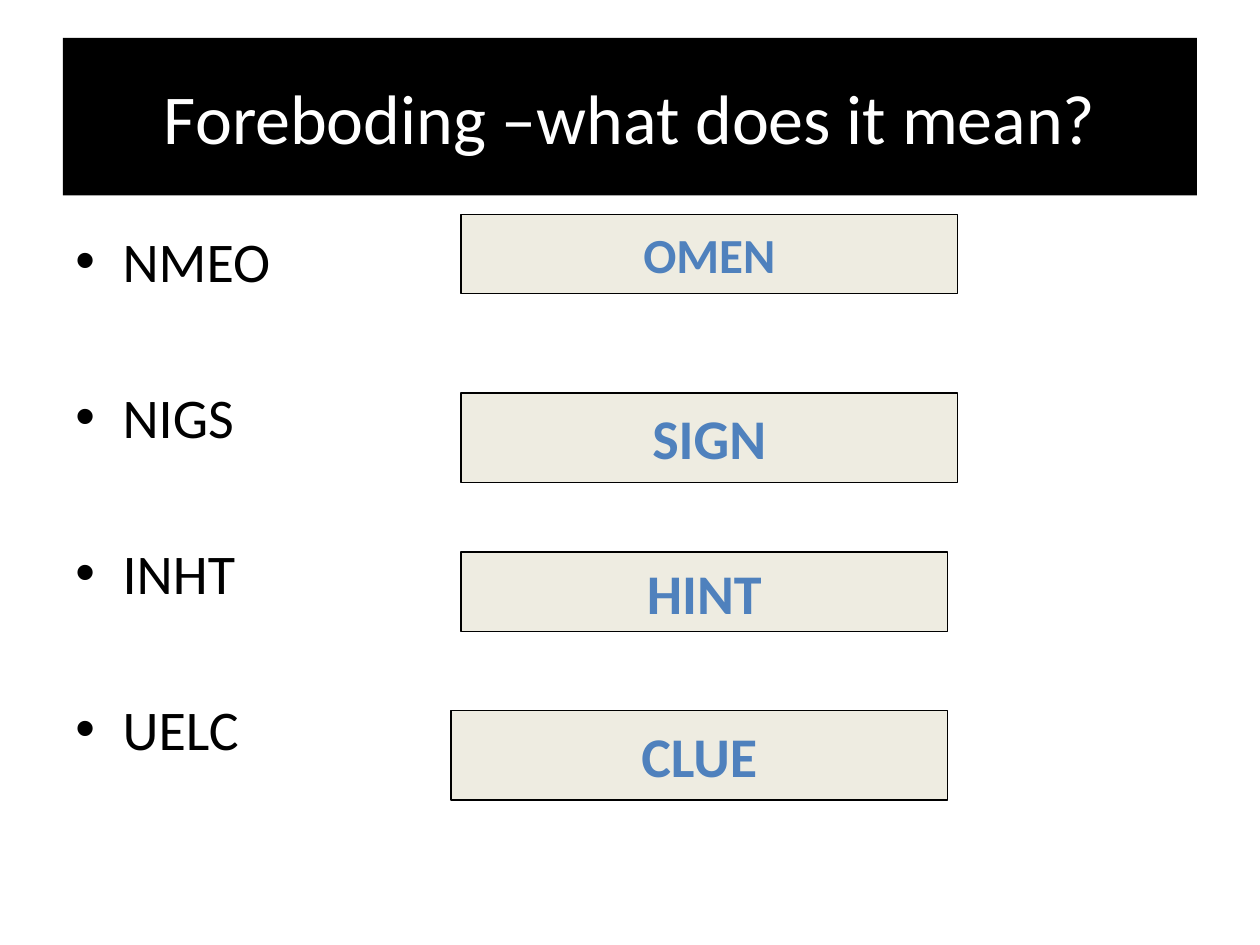
import dataclasses

import pptx
import pptx.dml.color
import pptx.enum.shapes
import pptx.enum.text
import pptx.oxml
import pptx.oxml.ns
import pptx.util

Pt = pptx.util.Pt
CENTER = pptx.enum.text.PP_ALIGN.CENTER
MIDDLE = pptx.enum.text.MSO_ANCHOR.MIDDLE


@dataclasses.dataclass(frozen=True)
class Theme:
    font: str = "Calibri"
    black: str = "000000"
    white: str = "FFFFFF"
    cream: str = "EEECE1"
    blue: str = "4F81BD"
    title_size: float = 40
    body_size: float = 32
    small_size: float = 28
    outline: float = 0.75


class SlideBuilder:
    def __init__(self, slide, theme):
        self.slide = slide
        self.theme = theme

    def color(self, value):
        return pptx.dml.color.RGBColor.from_string(value)

    def add_text(self, paragraph, text, size, color, bold=False):
        run = paragraph.add_run()
        run.text = text
        font_format = {"name": self.theme.font, "size": Pt(size), "bold": bold}
        for attribute, value in font_format.items():
            setattr(run.font, attribute, value)
        run.font.color.rgb = self.color(color)

    def panel(self, box, text, fill, size, color, bold=False, outline=None, wrap=True):
        """Add a filled rectangle with one centred line of text."""
        panel = self.slide.shapes.add_shape(
            pptx.enum.shapes.MSO_SHAPE.RECTANGLE, *map(Pt, box))
        panel.shadow.inherit = False
        panel.fill.solid()
        panel.fill.fore_color.rgb = self.color(fill)
        if outline:
            panel.line.color.rgb = self.color(outline)
            panel.line.width = Pt(self.theme.outline)
        else:
            panel.line.fill.background()
        frame = panel.text_frame
        frame.word_wrap = wrap
        frame.vertical_anchor = MIDDLE
        frame.paragraphs[0].alignment = CENTER
        self.add_text(frame.paragraphs[0], text, size, color, bold)

    def bullet_list(self, box, entries, indent, gap):
        frame = self.slide.shapes.add_textbox(*map(Pt, box)).text_frame
        frame.word_wrap = True
        for index, entry in enumerate(entries):
            paragraph = frame.add_paragraph() if index else frame.paragraphs[0]
            paragraph.space_before = Pt(gap if index else 0)
            self.add_text(paragraph, entry, self.theme.body_size, self.theme.black)
            properties = paragraph._p.get_or_add_pPr()
            properties.set("marL", str(Pt(indent)))
            properties.set("indent", str(-Pt(indent)))
            namespace = pptx.oxml.ns.nsdecls("a")
            for xml in (f'<a:buFont {namespace} typeface="Arial"/>',
                        f'<a:buChar {namespace} char="•"/>'):
                properties.append(pptx.oxml.parse_xml(xml))


def main():
    presentation = pptx.Presentation()
    presentation.slide_width, presentation.slide_height = Pt(720), Pt(540)
    theme = Theme()
    builder = SlideBuilder(
        presentation.slides.add_slide(presentation.slide_layouts[6]), theme)

    builder.panel((36, 21.6, 648, 90), "Foreboding –what does it mean?",
                  theme.black, theme.title_size, theme.white)
    builder.bullet_list((36, 126, 648, 356.4), ("NMEO", "NIGS", "INHT", "UELC"),
                        indent=27, gap=50.7)

    answers = (
        ("OMEN", (263.5, 122.4, 283.7, 45.4), theme.small_size),
        ("SIGN", (263.5, 224.5, 283.7, 51.1), theme.body_size),
        ("HINT", (263.5, 315.4, 278, 45.4), theme.body_size),
        ("CLUE", (257.8, 406.1, 283.7, 51.1), theme.body_size),
    )
    for word, box, size in answers:
        builder.panel(box, word, theme.cream, size, theme.blue, bold=True,
                      outline=theme.black, wrap=False)

    presentation.save("out.pptx")


if __name__ == "__main__":
    main()
